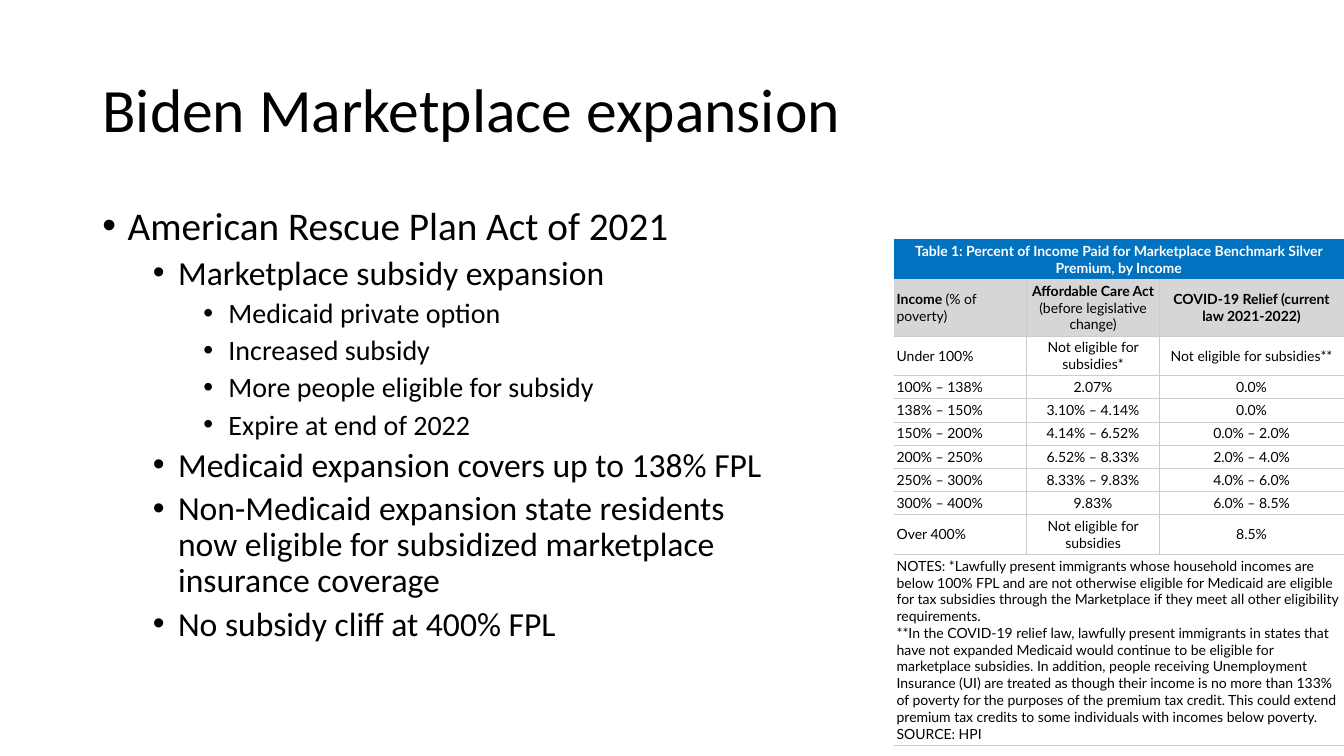
from lxml.etree import SubElement
from pptx import Presentation
from pptx.dml.color import RGBColor
from pptx.enum.text import MSO_ANCHOR as Anchor, MSO_AUTO_SIZE as AutoSize, PP_ALIGN as Align
from pptx.oxml import parse_xml
from pptx.oxml.ns import nsdecls, qn
from pptx.util import Pt

PX = 9525  # EMU in one px, 96 px to the inch

BULLETS = [
    (0, "American Rescue Plan Act of 2021"),
    (1, "Marketplace subsidy expansion"),
    (2, "Medicaid private option"),
    (2, "Increased subsidy"),
    (2, "More people eligible for subsidy"),
    (2, "Expire at end of 2022"),
    (1, "Medicaid expansion covers up to 138% FPL"),
    (1, "Non-Medicaid expansion state residents now eligible for subsidized "
        "marketplace insurance coverage"),
    (1, "No subsidy cliff at 400% FPL"),
]

TABLE_TITLE = "Table 1: Percent of Income Paid for Marketplace Benchmark Silver Premium, by Income"
HEADINGS = [
    [("Income\u00a0", True), ("(% of poverty)", False)],
    [("Affordable Care Act\n", True), ("(before legislative change)", False)],
    [("COVID-19 Relief (current law 2021-2022)", True)],
]
RATES = [
    ("Under 100%", "Not eligible for subsidies*", "Not eligible for subsidies**"),
    ("100% – 138%", "2.07%", "0.0%"),
    ("138% – 150%", "3.10% – 4.14%", "0.0%"),
    ("150% – 200%", "4.14% – 6.52%", "0.0% – 2.0%"),
    ("200% – 250%", "6.52% – 8.33%", "2.0% – 4.0%"),
    ("250% – 300%", "8.33% – 9.83%", "4.0% – 6.0%"),
    ("300% – 400%", "9.83%", "6.0% – 8.5%"),
    ("Over 400%", "Not eligible for subsidies", "8.5%"),
]
NOTES = (
    "NOTES: *Lawfully present immigrants whose household incomes are below 100% FPL and are "
    "not otherwise eligible for Medicaid are eligible for tax subsidies through the "
    "Marketplace if they meet all other eligibility requirements.\n"
    "**In the COVID-19 relief law, lawfully present immigrants in states that have not "
    "expanded Medicaid would continue to be eligible for marketplace subsidies. In addition, "
    "people receiving Unemployment Insurance (UI) are treated as though their income is no "
    "more than 133% of poverty for the purposes of the premium tax credit. This could extend "
    "premium tax credits to some individuals with incomes below poverty.\n"
    "SOURCE: HPI"
)


def color(hex_text):
    return RGBColor.from_string(hex_text)


def add_text(para, text, font="Calibri", size=10, ink="000000", bold=False):
    """Add text to a paragraph, with a line break at each newline."""
    for index, line in enumerate(text.split("\n")):
        if index:
            para.add_line_break()
        if line:
            span = para.add_run()
            span.text = line
            span.font.name, span.font.size, span.font.bold = font, Pt(size), bold
            span.font.color.rgb = color(ink)


class SlideBuilder:
    table_font = "Lato"
    rule = "CCCCCC"
    level_sizes = (28, 24, 20)

    def __init__(self, deck):
        self.page = deck.slides.add_slide(deck.slide_layouts[1])

    def place(self, box, left, top, width, height):
        box.left, box.top = left * PX, top * PX
        box.width, box.height = width * PX, height * PX
        box.text_frame.word_wrap = True
        box.text_frame.auto_size = AutoSize.NONE

    def title(self, text, *area):
        box = self.page.shapes.title
        self.place(box, *area)
        box.text_frame.vertical_anchor = Anchor.MIDDLE
        para = box.text_frame.paragraphs[0]
        para.alignment, para.line_spacing = Align.LEFT, 0.9
        add_text(para, text, size=44)

    def bullets(self, items, *area):
        box = self.page.placeholders[1]
        self.place(box, *area)
        frame = box.text_frame
        for index, (level, text) in enumerate(items):
            para = frame.add_paragraph() if index else frame.paragraphs[0]
            para.level, para.line_spacing = level, 0.9
            para.space_before = Pt(5 if level else 10)
            props = para._p.get_or_add_pPr()
            props.set("marL", str((24 + 48 * level) * PX))
            props.set("indent", str(-24 * PX))
            SubElement(props, qn("a:buFont"), typeface="Arial")
            SubElement(props, qn("a:buChar"), char="•")
            add_text(para, text, size=self.level_sizes[level])

    def table(self, left, top, columns, rows):
        frame = self.page.shapes.add_table(
            len(rows), len(columns), left * PX, top * PX, sum(columns) * PX, sum(rows) * PX)
        table = frame.table
        table.first_row = table.horz_banding = False
        for column, width in zip(table.columns, columns):
            column.width = width * PX
        for row, height in zip(table.rows, rows):
            row.height = height * PX
        return table

    def cell(self, cell, spans, fill="FFFFFF", ink="000000", align=Align.LEFT, edges=""):
        """Fill a cell; edges names the ruled sides among L, R, T and B."""
        cell.margin_left = cell.margin_right = cell.margin_top = cell.margin_bottom = 3 * PX
        cell.vertical_anchor = Anchor.MIDDLE
        cell.fill.solid()
        cell.fill.fore_color.rgb = color(fill)
        for index, side in enumerate("LRTB"):
            paint = (f'<a:solidFill><a:srgbClr val="{self.rule}"/></a:solidFill>'
                     if side in edges else "<a:noFill/>")
            cell._tc.tcPr.insert(index, parse_xml(
                f'<a:ln{side} {nsdecls("a")} w="{Pt(0.75)}">{paint}</a:ln{side}>'))
        para = cell.text_frame.paragraphs[0]
        para.alignment = align
        for text, bold in spans:
            add_text(para, text, font=self.table_font, ink=ink, bold=bold)

    def wide_cell(self, table, row, spans, **style):
        first = table.cell(row, 0)
        first.merge(table.cell(row, len(table.columns) - 1))
        self.cell(first, spans, **style)


def main():
    deck = Presentation()
    deck.slide_width, deck.slide_height = 1280 * PX, 720 * PX
    slide = SlideBuilder(deck)

    # Title and list
    slide.title("Biden Marketplace expansion", 88, 38, 1104, 139)
    slide.bullets(BULLETS, 88, 192, 671, 457)

    # Premium table: title, headings, rates, notes
    table = slide.table(851, 228, [127, 126, 176], [36, 51, 36] + [20] * 6 + [36, 174])
    slide.wide_cell(table, 0, [(TABLE_TITLE, True)],
                    fill="0072C0", ink="FFFFFF", align=Align.CENTER)
    aligns = (Align.LEFT, Align.CENTER, Align.CENTER)
    inner_edges = ("R", "LR", "L")
    body = [[[(text, False)] for text in rate] for rate in RATES]
    for row, cells in enumerate([HEADINGS] + body, start=1):
        heading = row == 1
        for column, spans in enumerate(cells):
            slide.cell(table.cell(row, column), spans, align=aligns[column],
                       fill="D6D6D6" if heading else "FFFFFF",
                       edges=inner_edges[column] + ("B" if heading else "TB"))
    slide.wide_cell(table, len(RATES) + 2, [(NOTES, False)], edges="TB")

    deck.save("out.pptx")


if __name__ == "__main__":
    main()
